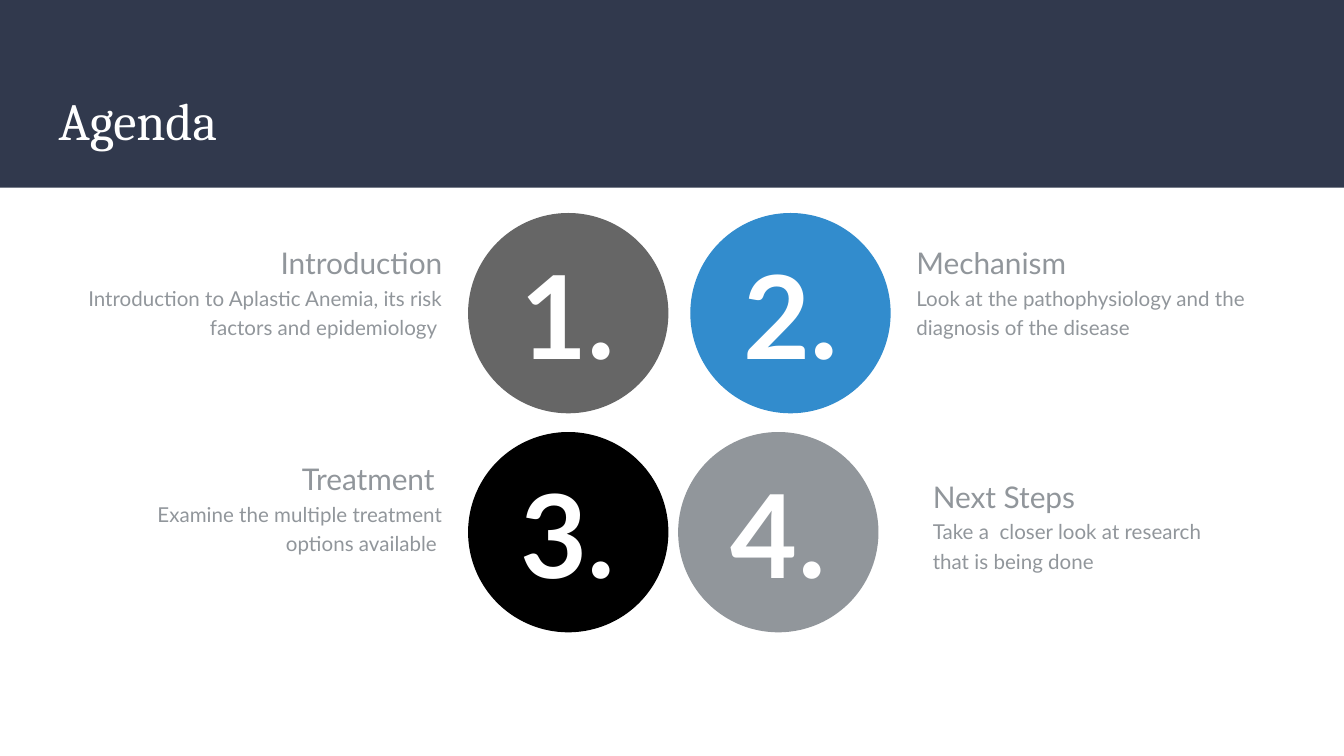
"""Build the agenda slide: a title band and four numbered topics."""
from dataclasses import dataclass

from pptx import Presentation
from pptx.dml.color import RGBColor as Color
from pptx.enum.shapes import MSO_SHAPE as Shape
from pptx.enum.text import MSO_ANCHOR as Anchor, PP_ALIGN as Align
from pptx.util import Cm, Pt


@dataclass(frozen=True)
class Theme:
    navy: str = "31394D"
    white: str = "FFFFFF"
    dark: str = "666666"
    blue: str = "328CCD"
    black: str = "000000"
    grey: str = "91969B"
    title_font: str = "Cambria"
    body_font: str = "Lato"
    title_size: int = 28
    number_size: int = 62
    heading_size: int = 16
    detail_size: int = 11


theme = Theme()


def write(shape, lines, font=theme.body_font, color=theme.white, bold=False,
          align=Align.LEFT, anchor=Anchor.TOP, spacing=1.0, margins=(0.1, 0.05)):
    frame = shape.text_frame
    frame.word_wrap = True
    frame.vertical_anchor = anchor
    frame.margin_left = frame.margin_right = Cm(margins[0])
    frame.margin_top = frame.margin_bottom = Cm(margins[1])
    for index, (text, size) in enumerate(lines):
        para = frame.paragraphs[0] if index == 0 else frame.add_paragraph()
        para.alignment = align
        para.line_spacing = spacing
        span = para.add_run()
        span.text = text
        span.font.name = font
        span.font.size = Pt(size)
        span.font.bold = bold
        span.font.color.rgb = Color.from_string(color)


def add_solid(page, kind, left, top, width, height, color):
    shape = page.shapes.add_shape(kind, Cm(left), Cm(top), Cm(width), Cm(height))
    shape.shadow.inherit = False
    shape.fill.solid()
    shape.fill.fore_color.rgb = Color.from_string(color)
    shape.line.color.rgb = Color.from_string(color)
    shape.line.width = Pt(0.75)
    return shape


deck = Presentation()
deck.slide_width, deck.slide_height = Cm(25.4), Cm(14.29)
page = deck.slides.add_slide(deck.slide_layouts[6])

band = add_solid(page, Shape.RECTANGLE, 0, 0, 25.4, 3.55, theme.navy)
band.line.fill.background()
title = page.shapes.add_textbox(Cm(0.86), Cm(1.4), Cm(23.67), Cm(1.73))
write(title, [("Agenda", theme.title_size)], font=theme.title_font,
      anchor=Anchor.MIDDLE, margins=(0.25, 0.25))

diameter = 3.76
row_tops = (4.04, 8.18)
topics = [
    ("Introduction", "Introduction to Aplastic Anemia, its risk factors and epidemiology ",
     theme.dark, 8.86, (1.09, 4.45, 7.37, 3.02)),
    ("Mechanism", "Look at the pathophysiology and the diagnosis of the disease",
     theme.blue, 13.06, (17.22, 4.45, 6.65, 2.67)),
    ("Treatment ", "Examine the multiple treatment options available ",
     theme.black, 8.86, (2.59, 8.53, 5.87, 3.02)),
    ("Next Steps", "Take a  closer look at research that is being done",
     theme.grey, 12.83, (17.53, 8.86, 5.87, 2.39)),
]
for index, (heading, detail, color, left, area) in enumerate(topics):
    row, column = divmod(index, 2)
    circle = add_solid(page, Shape.OVAL, left, row_tops[row], diameter, diameter, color)
    write(circle, [(f"{index + 1}.", theme.number_size)], bold=True,
          align=Align.CENTER, anchor=Anchor.MIDDLE)
    box = page.shapes.add_textbox(*map(Cm, area))
    write(box, [(heading, theme.heading_size), (detail, theme.detail_size)],
          color=theme.grey, align=(Align.RIGHT, Align.LEFT)[column], spacing=1.2)

deck.save("out.pptx")
